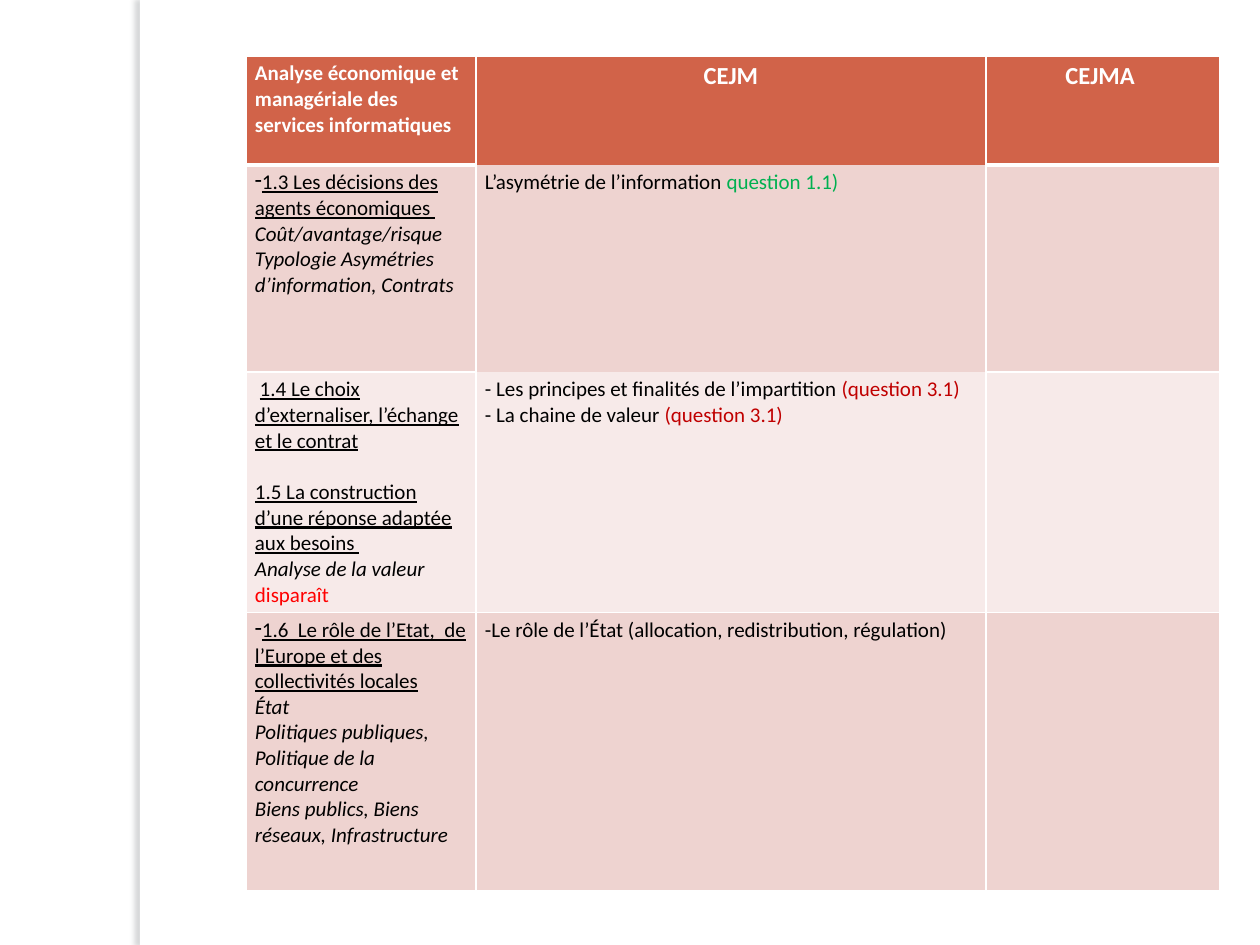
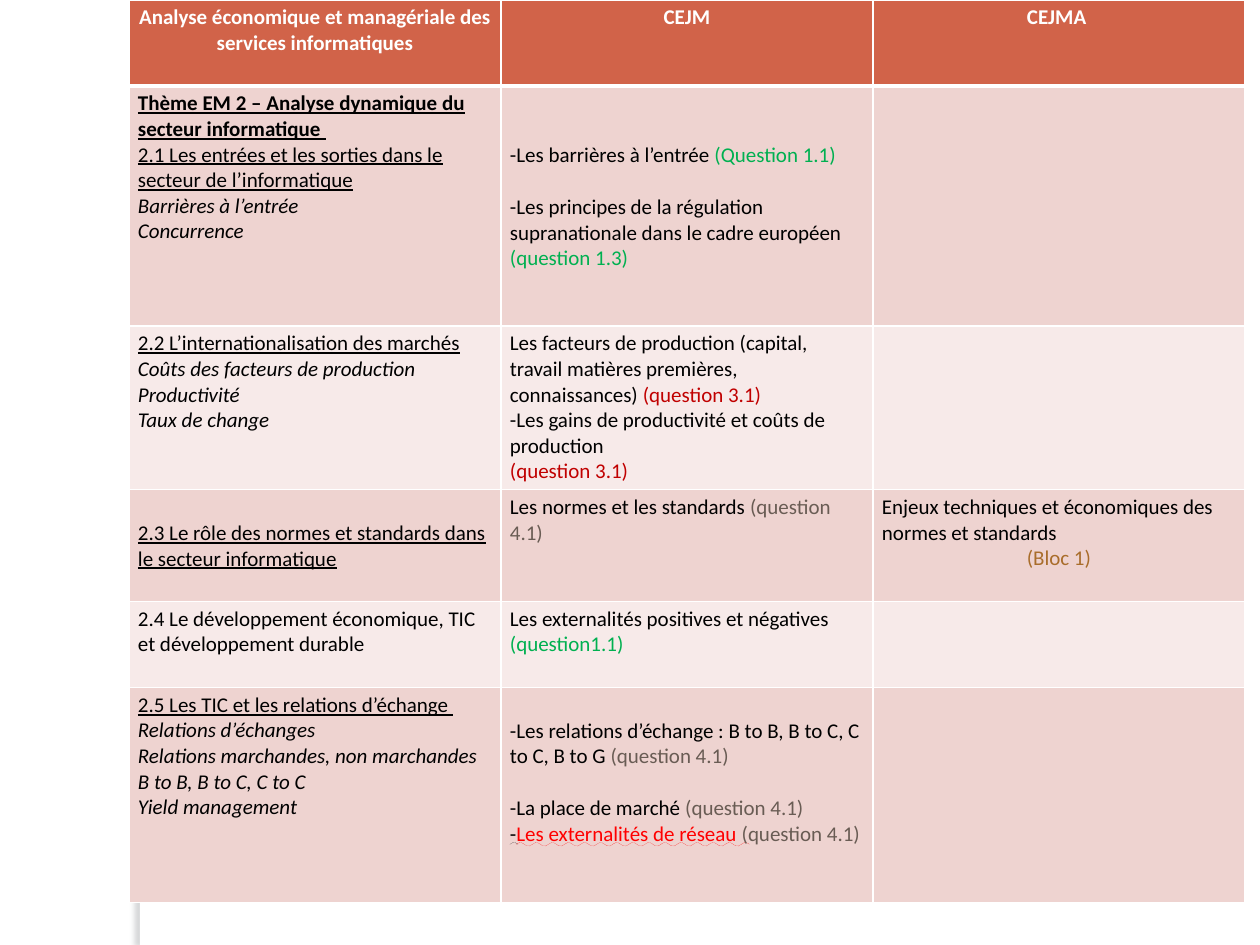
from lxml import etree
from pptx import Presentation
from pptx import util as u
from pptx.dml.color import RGBColor
from pptx.enum import shapes, text
from pptx.oxml.ns import qn

PX = u.Inches(1) / 126
SLIDE_W, SLIDE_H = 1260, 945
FONT = "Calibri"
LINE_GAP = 26
PAD_X, PAD_Y = 9, 5
WHITE = "FFFFFF"
HEAD_FILL = "D16349"
BAND_FILLS = ("EED3D0", "F7EAE9")
SHADOW = "61686B"

STYLES = {
    "plain": {},
    "topic": {"underline": True},
    "theme": {"underline": True, "bold": True},
    "notion": {"italic": True},
    "green": {"color": "00B050"},
    "crimson": {"color": "C00000"},
    "red": {"color": "FF0000"},
    "grey": {"color": "695C54"},
    "ochre": {"color": "A96D2B"},
    "wavy": {"underline": text.MSO_UNDERLINE.WAVY_LINE},
    "wavy_red": {"underline": text.MSO_UNDERLINE.WAVY_LINE, "color": "FF0000"},
    "head": {"bold": True, "color": WHITE},
    "big_head": {"bold": True, "color": WHITE, "size": u.Pt(14)},
}


def px(n):
    return u.Emu(round(n * PX))


def rgb(hex_string):
    return RGBColor.from_string(hex_string)


def para(*runs, gap=0, bullet=None, center=False):
    return {"runs": runs, "gap": gap, "bullet": bullet, "center": center}


def line(content, style="plain", **options):
    return para((content, style), **options)


def notions(*lines):
    return [line(content, "notion") for content in lines]


def child(parent, tag, **attrs):
    return etree.SubElement(parent, qn(tag), {k: str(v) for k, v in attrs.items()})


def add_run(p, content, style):
    r = p.add_run()
    r.text = content
    fmt = {"name": FONT, "size": u.Pt(12), "color": "000000", **STYLES[style]}
    r.font.color.rgb = rgb(fmt.pop("color"))
    for name, value in fmt.items():
        setattr(r.font, name, value)


def write_cell(cell, paragraphs):
    margins = {"margin_left": PAD_X, "margin_right": PAD_X,
               "margin_top": PAD_Y, "margin_bottom": PAD_Y}
    if paragraphs:
        margins["margin_top"] += paragraphs[0]["gap"] * LINE_GAP
    for name, value in margins.items():
        setattr(cell, name, px(value))
    tf = cell.text_frame
    for i, spec in enumerate(paragraphs):
        p = tf.add_paragraph() if i else tf.paragraphs[0]
        p.alignment = text.PP_ALIGN.CENTER if spec["center"] else text.PP_ALIGN.LEFT
        if i and spec["gap"]:
            p.space_before = px(spec["gap"] * LINE_GAP)
        if spec["bullet"]:
            pPr = p._p.get_or_add_pPr()
            pPr.set("marL", "0")
            pPr.set("indent", "0")
            child(pPr, "a:buFontTx")
            child(pPr, "a:buChar", char=spec["bullet"])
        for content, style in spec["runs"]:
            add_run(p, content, style)


def paint_cell(cell, fill, top, bottom):
    tcPr = cell._tc.get_or_add_tcPr()
    for side, width in (("L", 1), ("R", 1), ("T", top), ("B", bottom)):
        ln = child(tcPr, "a:ln" + side, w=u.Pt(width))
        if width:
            child(child(ln, "a:solidFill"), "a:srgbClr", val=WHITE)
        else:
            child(ln, "a:noFill")
    cell.fill.solid()
    cell.fill.fore_color.rgb = rgb(fill)


def add_grid(s, left, top, widths, heights, rows, open_joints=()):
    tbl = s.shapes.add_table(len(rows), len(widths), px(left), px(top),
                             px(sum(widths)), px(sum(heights))).table
    for col, width in zip(tbl.columns, widths):
        col.width = px(width)
    for row, height in zip(tbl.rows, heights):
        row.height = px(height)

    def joint(r, c):
        if (r, c) in open_joints:
            return 0
        return 3 if r == 1 else 1

    for r, row in enumerate(rows):
        fill = BAND_FILLS[(r - 1) % 2] if r else HEAD_FILL
        for c in range(len(widths)):
            cell = tbl.cell(r, c)
            write_cell(cell, row[c] if c < len(row) else [])
            paint_cell(cell, fill, joint(r, c), joint(r + 1, c))


def add_side_band(s, left, width):
    sp = s.shapes.add_shape(shapes.MSO_SHAPE.RECTANGLE, px(left), 0, px(width), px(SLIDE_H))
    sp.fill.solid()
    sp.fill.fore_color.rgb = rgb(WHITE)
    sp.line.fill.background()
    sp.shadow.inherit = False
    effects = sp._element.spPr.find(qn("a:effectLst"))
    shadow = child(effects, "a:outerShdw", blurRad=u.Pt(3), dist=u.Pt(3),
                   dir=180 * 60000, algn="ctr", rotWithShape=0)
    child(child(shadow, "a:srgbClr", val=SHADOW), "a:alpha", val=25000)


def new_slide(prs):
    s = prs.slides.add_slide(prs.slide_layouts[6])
    add_side_band(s, 140, 10)
    return s


def heading(style, centered):
    return [
        [line("Analyse économique et managériale des services informatiques",
              "head", center=centered)],
        [line("CEJM", style, center=True)],
        [line("CEJMA ", style, center=True)],
    ]


def theme_one(prs):
    rows = [
        heading("big_head", False),
        [[line("1.3 Les décisions des agents économiques ", "topic", bullet="-"),
          *notions("Coût/avantage/risque",
                   "Typologie Asymétries d’information, Contrats")],
         [para(("L’asymétrie de l’information ", "plain"), ("question 1.1)", "green"))]],
        [[para((" ", "plain"),
               ("1.4 Le choix d’externaliser, l’échange et le contrat", "topic")),
          line("1.5 La construction d’une réponse adaptée aux besoins ", "topic", gap=1),
          para(("Analyse de la valeur ", "notion"), ("disparaît", "red"))],
         [para(("- Les principes et finalités de l’impartition ", "plain"),
               ("(question 3.1)", "crimson")),
          para(("- La chaine de valeur ", "plain"), ("(question 3.1)", "crimson"))]],
        [[line("1.6  Le rôle de l’Etat,  de l’Europe et des collectivités locales",
               "topic", bullet="-"),
          *notions("État", "Politiques publiques, Politique de la concurrence",
                   "Biens publics, Biens réseaux, Infrastructure")],
         [line("-Le rôle de l’État (allocation, redistribution, régulation)")]],
    ]
    add_grid(new_slide(prs), 246, 56, (230, 510, 234), (109, 207, 240, 278), rows,
             open_joints={(1, 1), (2, 1)})


def theme_two(prs):
    rows = [
        heading("head", True),
        [[line("Thème EM 2 – Analyse dynamique du secteur informatique ", "theme"),
          line("2.1 Les entrées et les sorties dans le secteur de l’informatique", "topic"),
          *notions("Barrières à l’entrée", "Concurrence")],
         [para(("-Les barrières à l’entrée ", "plain"), ("(Question 1.1)", "green"), gap=2),
          para(("-Les principes de la régulation supranationale dans le cadre européen ",
                "plain"), ("(question 1.3)", "green"), gap=1)]],
        [[line("2.2 L’internationalisation des marchés", "topic"),
          *notions("Coûts des facteurs de production", "Productivité", "Taux de change")],
         [para(("Les facteurs de production (capital, travail matières premières, "
                "connaissances) ", "plain"), ("(question 3.1)", "crimson")),
          line("-Les gains de productivité et coûts de production"),
          line("(question 3.1)", "crimson")]],
        [[line("2.3 Le rôle des normes et standards dans le secteur informatique",
               "topic", gap=1)],
         [para(("Les normes et les standards ", "plain"), ("(question 4.1)", "grey"))],
         [line("Enjeux techniques et économiques des normes et standards"),
          line("(Bloc 1)", "ochre", center=True)]],
        [[line("2.4 Le développement économique, TIC et développement durable")],
         [para(("Les externalités positives et négatives ", "plain"),
               ("(question1.1)", "green"))]],
        [[line("2.5 Les TIC et les relations d’échange ", "topic"),
          *notions("Relations d’échanges", "Relations marchandes, non marchandes",
                   "B to B, B to C, C to C", "Yield management")],
         [para(("-Les relations d’échange : B to B, B to C, C to C, B to G ", "plain"),
               ("(question 4.1)", "grey"), gap=1),
          para(("-La place de marché ", "plain"), ("(question 4.1)", "grey"), gap=1),
          para(("-", "wavy"), ("Les externalités de réseau ", "wavy_red"),
               ("(question 4.1)", "grey"))]],
    ]
    add_grid(new_slide(prs), 129, 0, (372,) * 3, (86, 240, 163, 112, 86, 215), rows)


def main():
    prs = Presentation()
    prs.slide_width, prs.slide_height = px(SLIDE_W), px(SLIDE_H)
    theme_one(prs)
    theme_two(prs)
    prs.save("out.pptx")


if __name__ == "__main__":
    main()
